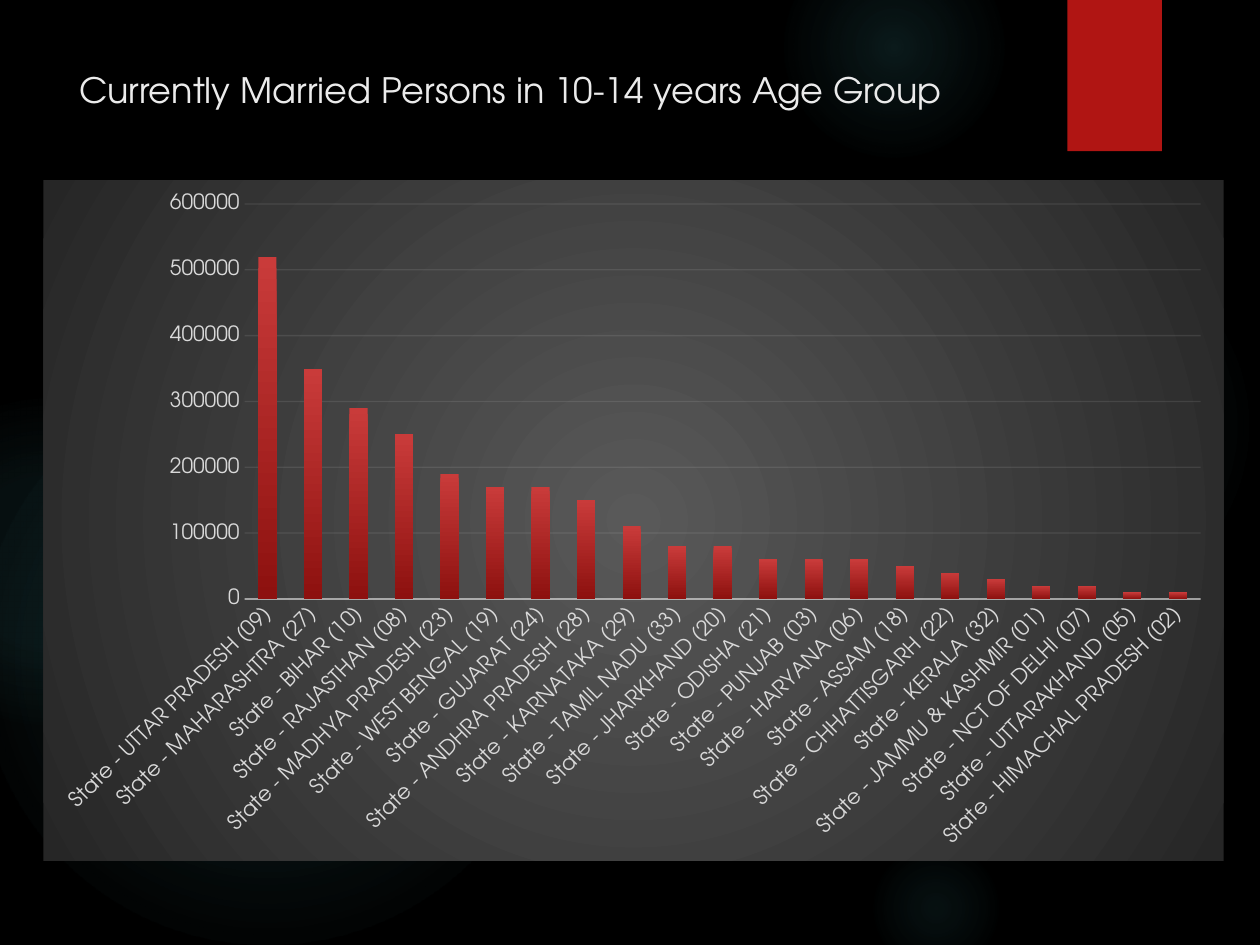
import pptx
import pptx.chart.data
import pptx.dml.color
import pptx.enum.chart
import pptx.enum.shapes
import pptx.enum.text
import pptx.oxml
import pptx.oxml.ns
import pptx.util
from dataclasses import dataclass

Pt = pptx.util.Pt
NAMESPACES = pptx.oxml.ns.nsdecls("a", "c")


@dataclass(frozen=True)
class Theme:
    font: str = "TeX Gyre Adventor"
    background: str = "000000"
    glow: str = "50B9C1"
    accent: str = "B01513"
    title: str = "EBEBEB"
    label: str = "D9D9D9"
    rule: str = "F2F2F2"
    bar: tuple = ("C93B3A", "8D110F")
    panel: tuple = ("595959", "262626")
    title_size: float = 20
    label_size: float = 12


def rgb(value):
    return pptx.dml.color.RGBColor.from_string(value)


def gradient(stops, angle=None):
    stop_xml = "".join(
        f'<a:gs pos="{position * 1000}"><a:srgbClr val="{color}">'
        f'<a:alpha val="{alpha * 1000}"/></a:srgbClr></a:gs>'
        for position, color, alpha in stops
    )
    if angle is None:
        direction = ('<a:path path="circle"><a:fillToRect l="50000" t="50000" '
                     'r="50000" b="50000"/></a:path>')
    else:
        direction = f'<a:lin ang="{angle * 60000}" scaled="0"/>'
    return pptx.oxml.parse_xml(
        f'<a:gradFill {NAMESPACES} rotWithShape="1"><a:gsLst>{stop_xml}</a:gsLst>'
        f'{direction}</a:gradFill>'
    )


def fill_gradient(fill, element, stops, angle=None):
    fill.solid()
    solid = element.xpath(".//a:solidFill")[0]
    solid.getparent().replace(solid, gradient(stops, angle))


class SlideBuilder:
    def __init__(self, slide, theme):
        self.slide = slide
        self.theme = theme
        slide.background.fill.solid()
        slide.background.fill.fore_color.rgb = rgb(theme.background)

    def style_font(self, font, size, color):
        font.name = self.theme.font
        font.size = Pt(size)
        font.color.rgb = rgb(color)

    def block(self, kind, left, top, width, height):
        block = self.slide.shapes.add_shape(
            kind, Pt(left), Pt(top), Pt(width), Pt(height))
        block.shadow.inherit = False
        block.line.fill.background()
        return block

    def glow(self, left, top, diameter, center, middle, edge):
        oval = pptx.enum.shapes.MSO_SHAPE.OVAL
        glow = self.block(oval, left, top, diameter, diameter)
        color = self.theme.glow
        stops = [(0, color, center), (36, color, middle), (edge, color, 0)]
        fill_gradient(glow.fill, glow._element.spPr, stops)

    def ribbon(self, left, top, width, height):
        rectangle = pptx.enum.shapes.MSO_SHAPE.RECTANGLE
        ribbon = self.block(rectangle, left, top, width, height)
        ribbon.fill.solid()
        ribbon.fill.fore_color.rgb = rgb(self.theme.accent)

    def title(self, text, left, top, width, height):
        title = self.slide.shapes.title
        title.left, title.top = Pt(left), Pt(top)
        title.width, title.height = Pt(width), Pt(height)
        self.slide.shapes._spTree.append(title._element)
        frame = title.text_frame
        frame.word_wrap = True
        frame.auto_size = pptx.enum.text.MSO_AUTO_SIZE.NONE
        frame.vertical_anchor = pptx.enum.text.MSO_ANCHOR.TOP
        paragraph = frame.paragraphs[0]
        paragraph.alignment = pptx.enum.text.PP_ALIGN.LEFT
        run = paragraph.add_run()
        run.text = text
        self.style_font(run.font, self.theme.title_size, self.theme.title)

    def rule(self, line, owner, color_path, width, alpha):
        line.color.rgb = rgb(self.theme.rule)
        line.width = Pt(width)
        owner.xpath(color_path)[0].append(pptx.oxml.parse_xml(
            f'<a:alpha {NAMESPACES} val="{alpha * 1000}"/>'))

    def axis(self, axis):
        axis.major_tick_mark = pptx.enum.chart.XL_TICK_MARK.NONE
        axis.minor_tick_mark = pptx.enum.chart.XL_TICK_MARK.NONE
        self.style_font(axis.tick_labels.font, self.theme.label_size, self.theme.label)

    def column_chart(self, series_name, points, left, top, width, height):
        data = pptx.chart.data.CategoryChartData()
        data.categories = [f"State - {state}" for state, _ in points]
        data.add_series(series_name, [persons for _, persons in points])
        chart = self.slide.shapes.add_chart(
            pptx.enum.chart.XL_CHART_TYPE.COLUMN_STACKED,
            Pt(left), Pt(top), Pt(width), Pt(height), data).chart
        chart.has_legend = False
        chart.has_title = False
        self.style_font(chart.font, self.theme.label_size, self.theme.label)

        states, persons = chart.category_axis, chart.value_axis
        self.axis(states)
        self.axis(persons)
        self.rule(states.format.line, states._element, "c:spPr//a:srgbClr", 1, 54)
        states.has_major_gridlines = False
        label_body = states._element.xpath("c:txPr/a:bodyPr")[0]
        label_body.set("rot", "-2700000")
        label_body.set("vert", "horz")
        persons.minimum_scale, persons.maximum_scale = 0, 600000
        persons.major_unit = 100000
        persons.tick_labels.number_format = "General"
        persons.tick_labels.number_format_is_linked = False
        persons.format.line.fill.background()
        self.rule(persons.major_gridlines.format.line, persons._element,
                  "c:majorGridlines//a:srgbClr", 0.75, 10)

        plot = chart.plots[0]
        plot.gap_width, plot.overlap = 150, 100
        plot.vary_by_categories = False
        bars = plot.series[0]
        bars.invert_if_negative = False
        light, dark = self.theme.bar
        fill_gradient(bars.format.fill, bars._element,
                      [(0, light, 100), (100, dark, 100)], 90)
        self.chart_panel(chart)
        self.plot_area(chart, x=115 / width, y=13.6 / height,
                       w=546.3 / width, h=225.7 / height)

    def chart_panel(self, chart):
        inner, outer = self.theme.panel
        panel = pptx.oxml.parse_xml(
            f'<c:spPr {NAMESPACES}><a:ln><a:noFill/></a:ln></c:spPr>')
        panel.insert(0, gradient([(0, inner, 100), (100, outer, 100)]))
        chart._chartSpace.xpath("c:txPr")[0].addprevious(panel)

    def plot_area(self, chart, **fractions):
        area = chart._chartSpace.xpath("c:chart/c:plotArea")[0]
        for layout in area.xpath("c:layout"):
            area.remove(layout)
        sizes = "".join(f'<c:{key} val="{value}"/>' for key, value in fractions.items())
        area.insert(0, pptx.oxml.parse_xml(
            f'<c:layout {NAMESPACES}><c:manualLayout><c:layoutTarget val="inner"/>'
            f'<c:xMode val="edge"/><c:yMode val="edge"/>{sizes}'
            '</c:manualLayout></c:layout>'))


GLOWS = [
    (496, 132, 222, 7, 6, 69),
    (448, -36, 126, 14, 7, 73),
    (496, 480, 78, 9, 5, 66),
    (-12, 210, 330, 11, 10, 75),
    (-66, 228, 186, 8, 8, 72),
]

MARRIED_PERSONS = [
    ("UTTAR PRADESH (09)", 520000), ("MAHARASHTRA (27)", 350000), ("BIHAR (10)", 290000),
    ("RAJASTHAN (08)", 250000), ("MADHYA PRADESH (23)", 190000), ("WEST BENGAL (19)", 170000),
    ("GUJARAT (24)", 170000), ("ANDHRA PRADESH (28)", 150000), ("KARNATAKA (29)", 110000),
    ("TAMIL NADU (33)", 80000), ("JHARKHAND (20)", 80000), ("ODISHA (21)", 60000),
    ("PUNJAB (03)", 60000), ("HARYANA (06)", 60000), ("ASSAM (18)", 50000),
    ("CHHATTISGARH (22)", 40000), ("KERALA (32)", 30000), ("JAMMU & KASHMIR (01)", 20000),
    ("NCT OF DELHI (07)", 20000), ("UTTARAKHAND (05)", 10000), ("HIMACHAL PRADESH (02)", 10000),
]


def main():
    deck = pptx.Presentation()
    deck.slide_width, deck.slide_height = Pt(720), Pt(540)
    builder = SlideBuilder(deck.slides.add_slide(deck.slide_layouts[5]), Theme())
    for glow in GLOWS:
        builder.glow(*glow)
    builder.ribbon(610, 0, 54, 86.4)
    builder.title("Currently Married Persons in 10-14 years Age Group", 38, 35.5, 556, 68)
    builder.column_chart("Series 1", MARRIED_PERSONS, 24.8, 103, 674.5, 389)
    deck.save("out.pptx")


if __name__ == "__main__":
    main()
